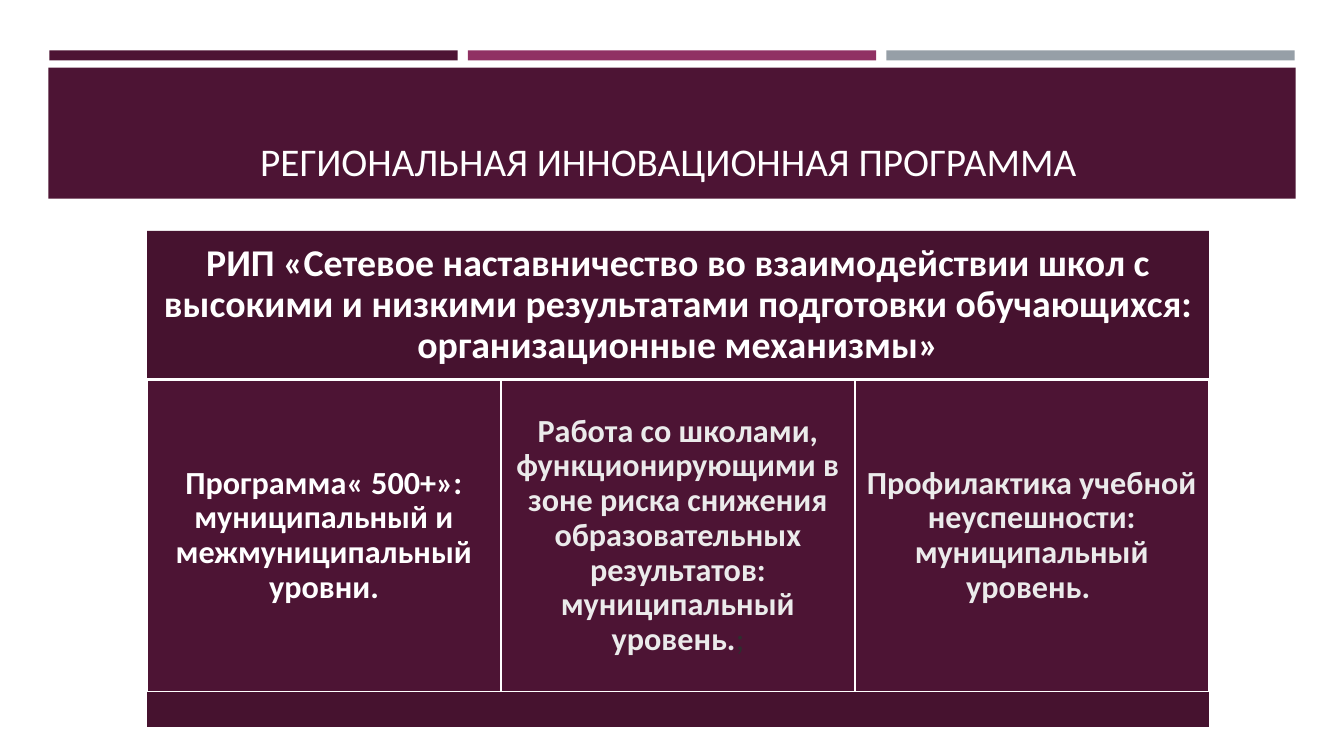
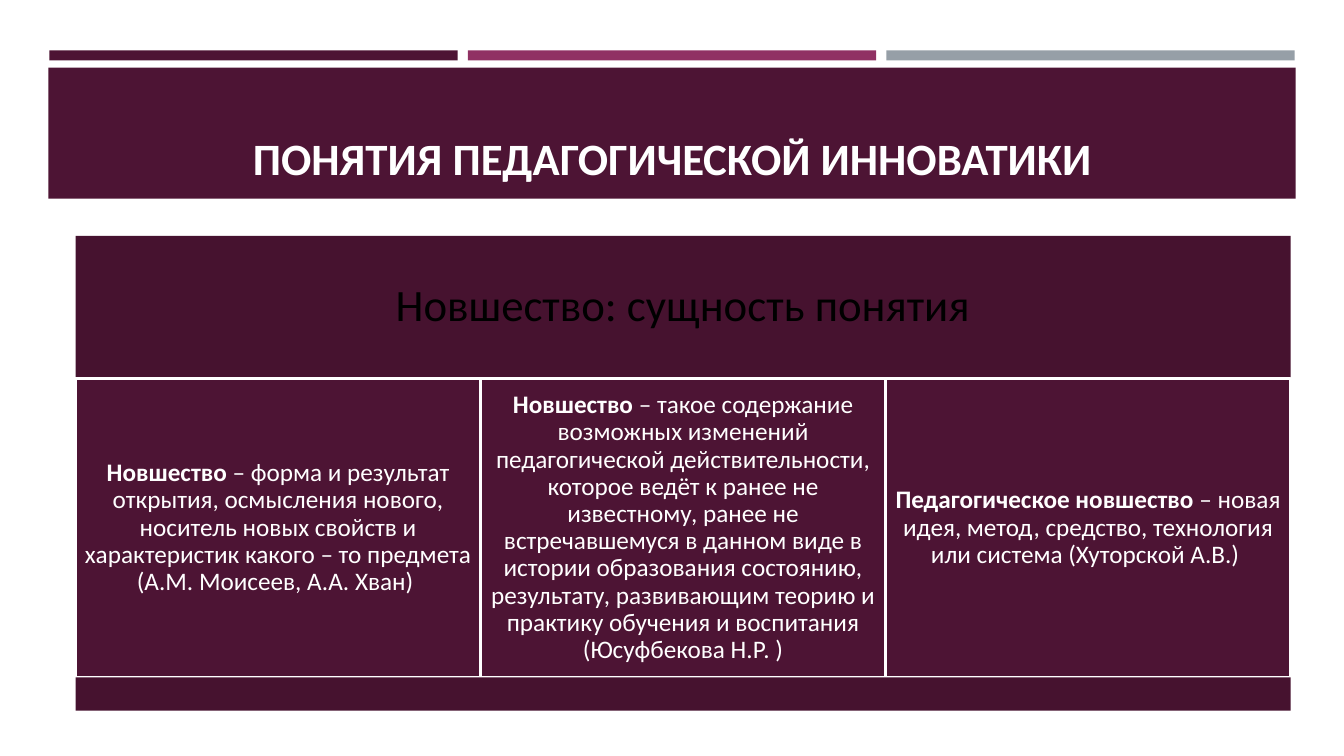
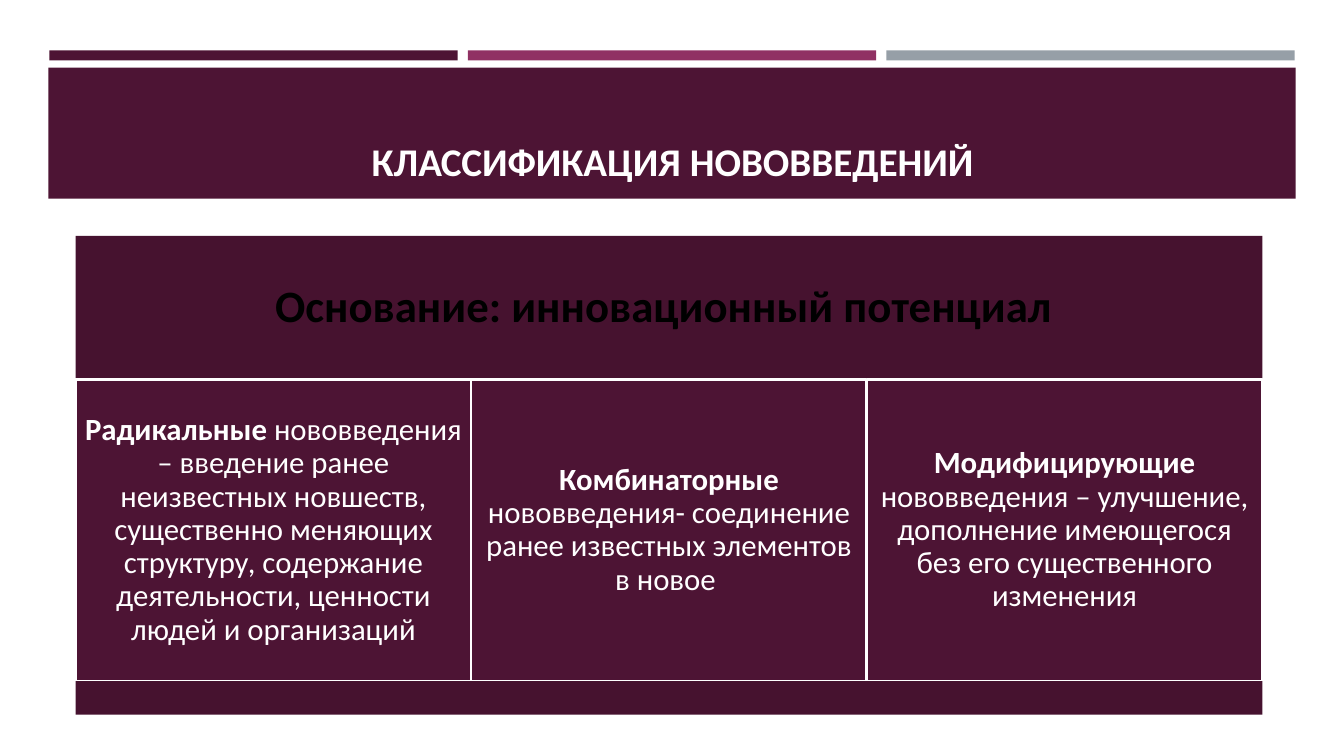
from dataclasses import dataclass
from typing import NamedTuple

from pptx import Presentation
from pptx import util as u
from pptx.dml.color import RGBColor
from pptx.enum import shapes, text

COLORS = {
    "plum": "4D1434",
    "dark_plum": "46122F",
    "magenta": "903163",
    "gray": "969FA7",
    "white": "FFFFFF",
    "pale": "EBEBEB",
    "charcoal": "2E2E2E",
    "black": "000000",
}
FONT = "Calibri"
SLIDE_WIDTH, SLIDE_HEIGHT = 13.33, 7.5
COLUMNS = 3
STRIPE_WIDTH, STRIPE_GAP = 4.05, 0.1
HEADER_SHARE, BODY_SHARE, FOOT_SHARE = 0.3, 0.63, 0.07


class Box(NamedTuple):
    left: float
    top: float
    width: float
    height: float


class Run(NamedTuple):
    text: str
    bold: bool = False
    color: str = "white"


@dataclass
class Block:
    """Text of one or more cells that share a size and an inset."""
    runs: list[Run]
    size: float
    inset: float


@dataclass
class Page:
    title: Run
    title_size: float
    panel: Box
    header: Block
    columns: list[list[Run]]
    column_size: float
    column_inset: float


TITLE_BAND = Box(0.48, 0.67, 12.37, 1.3)
TITLE_BOX = Box(0.64, 0.77, 12.06, 1.11)

PAGES = [
    Page(
        Run("РЕГИОНАЛЬНАЯ ИННОВАЦИОННАЯ ПРОГРАММА "), 28,
        Box(1.46, 2.29, 10.53, 4.92),
        Block([Run("РИП «Сетевое наставничество во взаимодействии школ с высокими и "
                   "низкими результатами подготовки обучающихся: организационные "
                   "механизмы»", True)], 27, 0.11),
        [
            [Run("Программа« 500+»: муниципальный и межмуниципальный уровни.", True)],
            [Run("Работа со школами, функционирующими в зоне риска снижения "
                 "образовательных результатов: муниципальный уровень.", True, "pale"),
             Run(";", False, "charcoal")],
            [Run("Профилактика учебной неуспешности: муниципальный уровень. ",
                 True, "pale")],
        ], 23, 0.1,
    ),
    Page(
        Run("ПОНЯТИЯ ПЕДАГОГИЧЕСКОЙ ИННОВАТИКИ", True), 32,
        Box(0.75, 2.34, 12.05, 4.71),
        Block([Run("Новшество: сущность понятия", False, "black")], 32, 0.13),
        [
            [Run("Новшество", True),
             Run(" – форма и результат открытия, осмысления нового, носитель новых "
                 "свойств и характеристик какого – то предмета "
                 "(А.М. Моисеев, А.А. Хван) ")],
            [Run("Новшество", True),
             Run(" – такое содержание возможных изменений педагогической "
                 "действительности, которое ведёт к ранее не известному, ранее не "
                 "встречавшемуся в данном виде в истории образования состоянию, "
                 "результату, развивающим теорию и практику обучения и воспитания "
                 "(Юсуфбекова Н.Р. )")],
            [Run("Педагогическое новшество", True),
             Run(" – новая идея, метод, средство, технология или система "
                 "(Хуторской А.В.) ")],
        ], 18, 0.07,
    ),
    Page(
        Run("КЛАССИФИКАЦИЯ НОВОВВЕДЕНИЙ", True), 28,
        Box(0.75, 2.34, 11.77, 4.75),
        Block([Run("Основание: инновационный потенциал ", True, "black")], 32, 0.13),
        [
            [Run("Радикальные", True),
             Run(" нововведения – введение ранее неизвестных новшеств, существенно "
                 "меняющих структуру, содержание деятельности, ценности людей и "
                 "организаций")],
            [Run("Комбинаторные", True),
             Run(" нововведения- соединение ранее известных элементов в новое ")],
            [Run("Модифицирующие ", True),
             Run("нововведения – улучшение, дополнение имеющегося без его "
                 "существенного изменения")],
        ], 22, 0.09,
    ),
]


def rgb(name: str) -> RGBColor:
    return RGBColor.from_string(COLORS[name])


def place(shape, box: Box) -> None:
    shape.left, shape.top, shape.width, shape.height = map(u.Inches, box)


def write(shape, runs: list[Run], size: float):
    """Fill the shape with one centred paragraph and return that paragraph."""
    frame = shape.text_frame
    frame.word_wrap = True
    frame.auto_size = text.MSO_AUTO_SIZE.NONE
    paragraph = frame.paragraphs[0]
    paragraph.alignment = text.PP_ALIGN.CENTER
    paragraph.font.name = FONT
    paragraph.font.size = u.Pt(size)
    for item in runs:
        run = paragraph.add_run()
        run.text = item.text
        run.font.bold = item.bold
        run.font.color.rgb = rgb(item.color)
    return paragraph


def add_rectangle(slide, box: Box, fill: str, outlined: bool = False):
    shape = slide.shapes.add_shape(shapes.MSO_SHAPE.RECTANGLE, *map(u.Inches, box))
    shape.shadow.inherit = False
    shape.fill.solid()
    shape.fill.fore_color.rgb = rgb(fill)
    if outlined:
        shape.line.color.rgb = rgb("white")
        shape.line.width = u.Pt(1.75)
    else:
        shape.line.fill.background()
    return shape


def fill_cell(shape, block: Block) -> None:
    frame = shape.text_frame
    frame.vertical_anchor = text.MSO_ANCHOR.MIDDLE
    frame.margin_left = frame.margin_right = u.Inches(block.inset)
    frame.margin_top = frame.margin_bottom = u.Inches(block.inset)
    write(shape, block.runs, block.size).line_spacing = 0.9


def add_title(slide, page: Page) -> None:
    for index, color in enumerate(("plum", "magenta", "gray")):
        left = 0.49 + index * (STRIPE_WIDTH + STRIPE_GAP)
        add_rectangle(slide, Box(left, 0.5, STRIPE_WIDTH, 0.1), color)
    add_rectangle(slide, TITLE_BAND, "plum")
    title = slide.shapes.title
    slide.shapes._spTree.append(title._element)  # the title lies above its band
    place(title, TITLE_BOX)
    title.text_frame.vertical_anchor = text.MSO_ANCHOR.BOTTOM
    write(title, [page.title], page.title_size)


def add_panel(slide, page: Page) -> None:
    """Draw a header, a row of equal columns and a foot strip."""
    left, top, width, height = page.panel
    body_top = top + HEADER_SHARE * height
    foot_top = body_top + BODY_SHARE * height
    column_width = width / COLUMNS

    header = add_rectangle(slide, Box(left, top, width, HEADER_SHARE * height), "dark_plum")
    fill_cell(header, page.header)
    for index, runs in enumerate(page.columns):
        box = Box(left + index * column_width, body_top, column_width, BODY_SHARE * height)
        column = add_rectangle(slide, box, "plum", outlined=True)
        fill_cell(column, Block(runs, page.column_size, page.column_inset))
    add_rectangle(slide, Box(left, foot_top, width, FOOT_SHARE * height), "dark_plum")


def main() -> None:
    presentation = Presentation()
    presentation.slide_width = u.Inches(SLIDE_WIDTH)
    presentation.slide_height = u.Inches(SLIDE_HEIGHT)
    title_only = presentation.slide_layouts[5]
    for page in PAGES:
        slide = presentation.slides.add_slide(title_only)
        add_title(slide, page)
        add_panel(slide, page)
    presentation.save("out.pptx")


if __name__ == "__main__":
    main()
